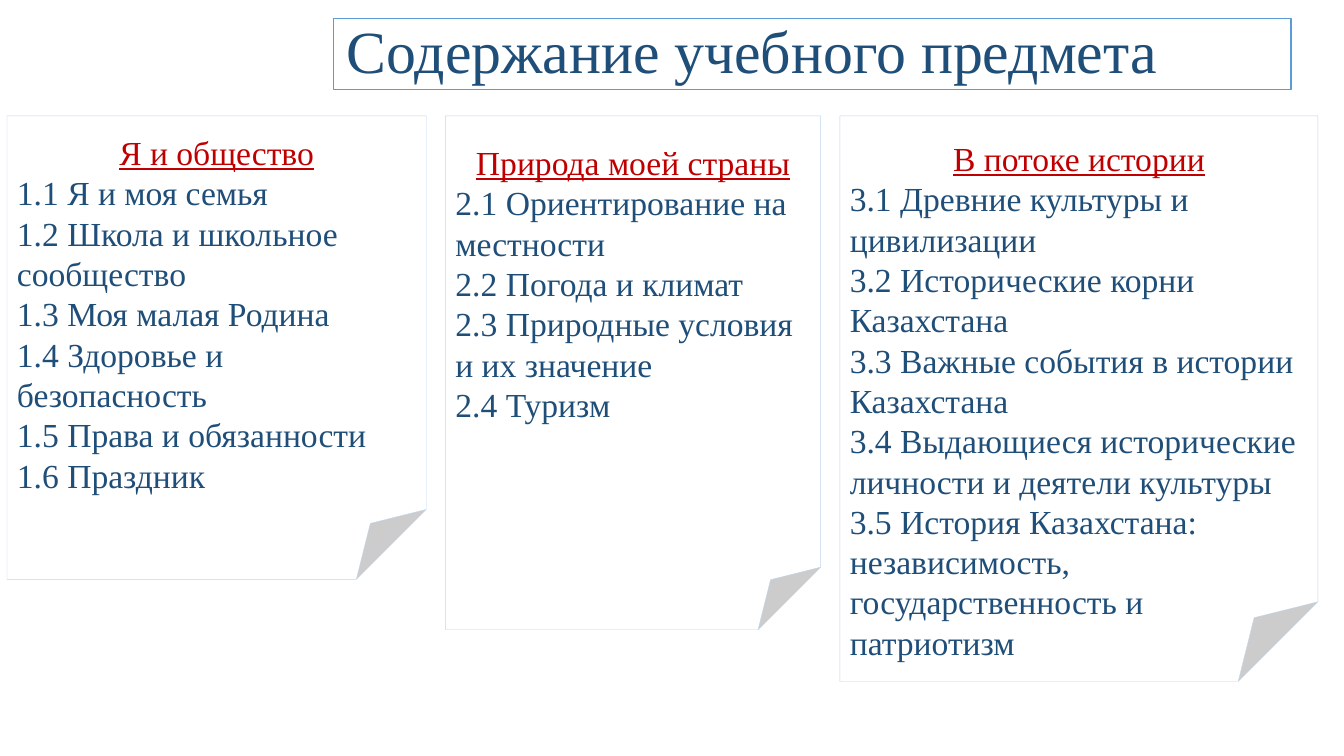
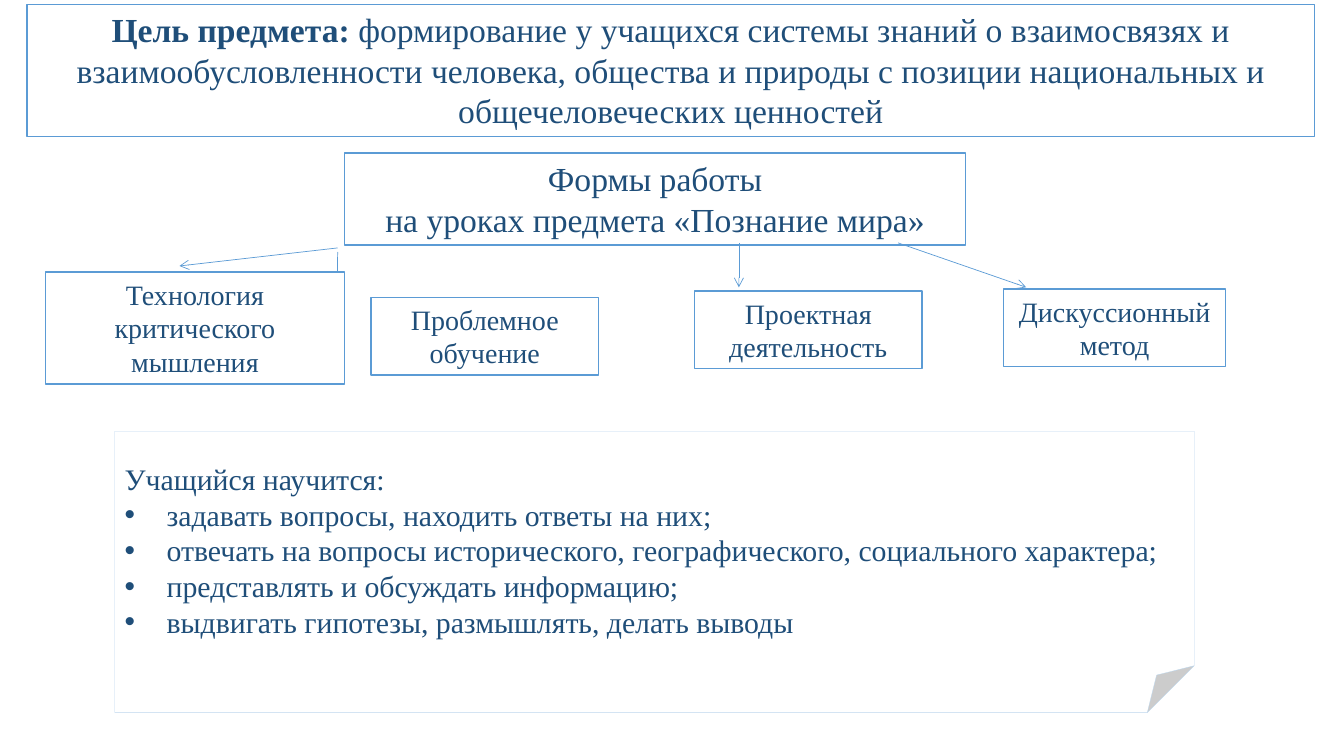
from pptx import Presentation
from pptx.dml.color import RGBColor
from pptx.enum import shapes, text
from pptx.oxml import parse_xml
from pptx.oxml.ns import nsdecls
from pptx.util import Pt

FONT = "Times New Roman"
NAVY = RGBColor(0x1F, 0x4E, 0x79)
RED = RGBColor(0xC0, 0x00, 0x00)
BLUE = RGBColor(0x5B, 0x9B, 0xD5)
PALE_BLUE = RGBColor(0xBD, 0xD7, 0xEE)
WHITE = RGBColor(0xFF, 0xFF, 0xFF)

LEFT, CENTER = text.PP_ALIGN.LEFT, text.PP_ALIGN.CENTER
TOP, MIDDLE = text.MSO_ANCHOR.TOP, text.MSO_ANCHOR.MIDDLE
TITLE_ONLY = 5

SECTION_TOP, SECTION_GAP = 82.8, 13.7
# Width, height, top inset, heading, topics
SECTIONS = [
    (299.5, 331, 11.4, "Я и общество", [
        "1.1 Я и моя семья",
        "1.2 Школа и школьное сообщество",
        "1.3 Моя малая Родина",
        "1.4 Здоровье и безопасность",
        "1.5 Права и обязанности",
        "1.6 Праздник",
    ]),
    (268, 367, 18.6, "Природа моей страны", [
        "2.1 Ориентирование на местности",
        "2.2 Погода и климат",
        "2.3 Природные условия и их значение",
        "2.4 Туризм",
    ]),
    (341.5, 404, 15.7, "В потоке истории", [
        "3.1 Древние культуры и цивилизации",
        "3.2 Исторические корни Казахстана",
        "3.3 Важные события в истории Казахстана",
        "3.4 Выдающиеся исторические личности и деятели культуры",
        "3.5 История Казахстана: независимость, государственность и патриотизм",
    ]),
]

GOAL = ("формирование у учащихся системы знаний о взаимосвязях и "
        "взаимообусловленности человека, общества и природы с позиции "
        "национальных и общечеловеческих ценностей")
FORMS = ["Формы работы", "на уроках предмета «Познание мира»"]
METHODS = [
    ("Технология критического мышления", (32.4, 194.4, 213.8, 80)),
    ("Проблемное обучение", (265, 212.4, 162.7, 55.4)),
    ("Проектная деятельность", (496, 208, 162.7, 55.4)),
    ("Дискуссионный метод", (717, 206.6, 158.4, 55.4)),
]
ARROWS = [
    (241.2, 177.1, 128.2, 190),
    (241.2, 180, 240.5, 233),
    (527.8, 173.5, 527.8, 205.2),
    (641.5, 173.5, 733, 205.2),
]
SKILLS = [
    "задавать вопросы, находить ответы на них;",
    "отвечать на вопросы исторического, географического, социального характера;",
    "представлять и обсуждать информацию;",
    "выдвигать гипотезы, размышлять, делать выводы",
]


def set_attrs(obj, values):
    for name, value in values.items():
        setattr(obj, name, value)


def place(sp, box):
    set_attrs(sp, dict(zip(("left", "top", "width", "height"), map(Pt, box))))


def outline(sp, color, width):
    sp.fill.solid()
    sp.fill.fore_color.rgb = WHITE
    sp.line.color.rgb = color
    sp.line.width = Pt(width)


def set_frame(tf, anchor=TOP, side=7.2, top=3.6):
    set_attrs(tf, {
        "word_wrap": True, "auto_size": text.MSO_AUTO_SIZE.NONE,
        "vertical_anchor": anchor,
        "margin_left": Pt(side), "margin_right": Pt(side),
        "margin_top": Pt(top), "margin_bottom": Pt(3.6),
    })


def add_run(p, words, size, color=NAVY, **style):
    r = p.add_run()
    r.text = words
    r.font.color.rgb = color
    set_attrs(r.font, {"name": FONT, "size": Pt(size), **style})


def add_line(tf, words, size, align=LEFT, color=NAVY, **style):
    """Fill the first paragraph if it is empty, else append one."""
    p = tf.paragraphs[0]
    if p.runs:
        p = tf.add_paragraph()
    p.alignment = align
    add_run(p, words, size, color, **style)
    return p


def add_bullet(p, indent=30):
    pPr = p._p.get_or_add_pPr()
    pPr.set("marL", str(Pt(indent)))
    pPr.set("indent", str(-Pt(indent)))
    for xml in ('<a:buFont %s typeface="Arial"/>', '<a:buChar %s char="•"/>'):
        pPr.append(parse_xml(xml % nsdecls("a")))


def format_title(s, box, **frame):
    sp = s.shapes.title
    place(sp, box)
    outline(sp, BLUE, 1)
    set_frame(sp.text_frame, **frame)
    return sp.text_frame


def add_shape(s, kind, box, color, width, **frame):
    sp = s.shapes.add_shape(kind, *map(Pt, box))
    sp.shadow.inherit = False
    outline(sp, color, width)
    set_frame(sp.text_frame, **frame)
    return sp.text_frame


def add_label(s, box, lines, size):
    tf = add_shape(s, shapes.MSO_SHAPE.RECTANGLE, box, BLUE, 1)
    for words in lines:
        add_line(tf, words, size, CENTER)


def add_note(s, box, top):
    return add_shape(s, shapes.MSO_SHAPE.FOLDED_CORNER, box, PALE_BLUE, 0.25, top=top)


def add_arrow(s, ends):
    cx = s.shapes.add_connector(shapes.MSO_CONNECTOR.STRAIGHT, *map(Pt, ends))
    cx.line.color.rgb = BLUE
    cx.line.width = Pt(0.5)
    cx.line._get_or_add_ln().append(
        parse_xml('<a:tailEnd %s type="arrow"/>' % nsdecls("a")))
    cx._element.spPr.append(parse_xml("<a:effectLst %s/>" % nsdecls("a")))


def build_contents(s):
    tf = format_title(s, (238.3, 13, 684, 51), anchor=MIDDLE, side=9.4)
    p = add_line(tf, "Содержание учебного предмета", 42.7)
    p.line_spacing = 0.9
    left = 5
    for width, height, top, heading, topics in SECTIONS:
        tf = add_note(s, (left, SECTION_TOP, width, height), top)
        add_line(tf, heading, 24, CENTER, RED, underline=True)
        for topic in topics:
            add_line(tf, topic, 24)
        left += width + SECTION_GAP


def build_goal(s):
    tf = format_title(s, (19.4, 3, 919.4, 94.3))
    p = add_line(tf, "Цель предмета: ", 24, CENTER, bold=True)
    add_run(p, GOAL, 24, bold=False)
    add_label(s, (246.2, 109.4, 443.5, 65.5), FORMS, 24)
    for ends in ARROWS:
        add_arrow(s, ends)
    for name, box in METHODS:
        add_label(s, box, [name], 20)
    tf = add_note(s, (82, 308, 771, 201), 21)
    add_line(tf, "Учащийся научится:", 21.3)
    for skill in SKILLS:
        add_bullet(add_line(tf, skill, 21.3))


def main():
    prs = Presentation()
    prs.slide_width, prs.slide_height = Pt(960), Pt(540)
    for build in (build_contents, build_goal):
        build(prs.slides.add_slide(prs.slide_layouts[TITLE_ONLY]))
    prs.save("out.pptx")


if __name__ == "__main__":
    main()
